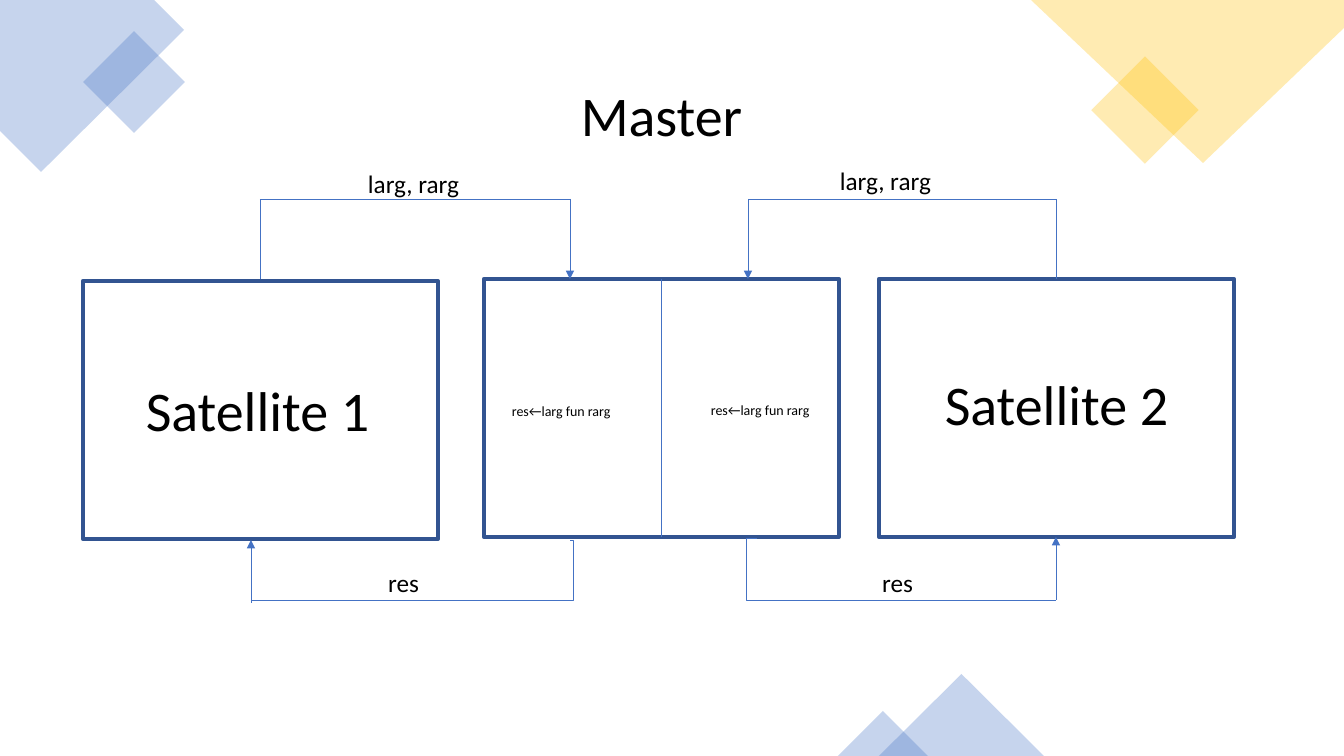
from lxml.etree import SubElement
from pptx import Presentation
from pptx.dml.color import RGBColor
from pptx.enum.shapes import MSO_CONNECTOR as LINK, MSO_SHAPE as SHAPE
from pptx.enum.text import MSO_ANCHOR, MSO_AUTO_SIZE, PP_ALIGN
from pptx.oxml.ns import qn
from pptx.util import Pt

PX = 914400 / 100.8
THEME = {
    "font": "Calibri",
    "blue": RGBColor(0x44, 0x72, 0xC4),
    "gold": RGBColor(0xFF, 0xC0, 0x00),
    "border": RGBColor(0x32, 0x54, 0x91),
    "text": RGBColor(0, 0, 0),
    "name": Pt(40),
    "label": Pt(18),
    "code": Pt(10),
    "box_line": Pt(3),
    "link_line": Pt(0.5),
    "alpha": 30000,
}


def emu(*lengths):
    return [round(length * PX) for length in lengths]


def write(holder, words, size, align):
    frame = holder.text_frame
    frame.text = words
    for key, value in {
        "word_wrap": True,
        "auto_size": MSO_AUTO_SIZE.SHAPE_TO_FIT_TEXT,
        "vertical_anchor": MSO_ANCHOR.TOP,
    }.items():
        setattr(frame, key, value)
    paragraph = frame.paragraphs[0]
    paragraph.alignment = align
    font = paragraph.runs[0].font
    font.name, font.size = THEME["font"], THEME[size]
    font.color.rgb = THEME["text"]


prs = Presentation()
prs.slide_width, prs.slide_height = emu(1344, 756)
slide = prs.slides.add_slide(prs.slide_layouts[5])
shapes = slide.shapes

# Corner decoration
decorations = []
for color, corners in [
    ("blue", [(0, 0), (154, 0), (184, 30), (41, 172), (0, 131)]),
    ("gold", [(1031, 0), (1344, 0), (1344, 28), (1203, 163)]),
]:
    outline = shapes.build_freeform(*corners[0], scale=PX)
    outline.add_line_segments(corners[1:], close=True)
    decorations.append((outline.convert_to_shape(), color))

for kind, color, place, turn in [
    (SHAPE.RECTANGLE, "blue", (98, 46, 72, 72), 315),
    (SHAPE.RECTANGLE, "gold", (1107, 72, 76, 76), 315),
    (SHAPE.ISOSCELES_TRIANGLE, "blue", (879, 674, 165, 82), 0),
    (SHAPE.ISOSCELES_TRIANGLE, "blue", (838, 711, 90, 45), 0),
]:
    corner = shapes.add_shape(kind, *emu(*place))
    corner.rotation = turn
    decorations.append((corner, color))

for decoration, color in decorations:
    decoration.shadow.inherit = False
    decoration.fill.solid()
    decoration.fill.fore_color.rgb = THEME[color]
    decoration.line.fill.background()
    tint = decoration.fill._xPr.find(qn("a:solidFill"))[0]
    SubElement(tint, qn("a:alpha"), val=str(THEME["alpha"]))

# Satellite 1, master, satellite 2
for left, top in [(83, 281), (484, 279), (879, 279)]:
    box = shapes.add_shape(SHAPE.RECTANGLE, *emu(left, top, 355, 258))
    box.shadow.inherit = False
    box.fill.background()
    box.line.color.rgb = THEME["border"]
    box.line.width = THEME["box_line"]

# Each link: start, end, arrowhead at the end, bend of an elbow
for start, end, arrow, bend in [
    ((661, 279), (661, 537), False, None),
    ((260, 279), (260, 199), False, None),
    ((260, 199), (570, 199), False, None),
    ((570, 199), (570, 279), True, None),
    ((1056, 279), (1056, 199), False, None),
    ((1056, 199), (748, 199), False, None),
    ((748, 199), (748, 279), True, None),
    ((251, 600), (570, 540), False, 101200),
    ((251, 603), (251, 540), True, None),
    ((757, 538), (1056, 600), False, -3700),
    ((1056, 600), (1056, 537), True, None),
]:
    kind = LINK.STRAIGHT if bend is None else LINK.ELBOW
    link = shapes.add_connector(kind, *emu(*start, *end))
    link.line.color.rgb = THEME["blue"]
    link.line.width = THEME["link_line"]
    properties = link._element.spPr
    SubElement(properties, qn("a:effectLst"))
    if arrow:
        SubElement(properties.find(qn("a:ln")), qn("a:tailEnd"), type="triangle")
    if bend is not None:
        guides = properties.find(qn("a:prstGeom")).get_or_add_avLst()
        SubElement(guides, qn("a:gd"), name="adj1", fmla=f"val {bend}")

title = shapes.title
title.left, title.top, title.width, title.height = emu(476, 75, 371, 78)
write(title, "Master", "name", PP_ALIGN.CENTER)

for words, size, align, (width, height), spots in [
    ("Satellite 1", "name", PP_ALIGN.CENTER, (371, 78), [(72, 371)]),
    ("Satellite 2", "name", PP_ALIGN.CENTER, (371, 78), [(871, 365)]),
    ("larg, rarg", "label", PP_ALIGN.CENTER, (295, 40), [(266, 163), (738, 160)]),
    ("res", "label", PP_ALIGN.CENTER, (273, 41), [(267, 562), (761, 562)]),
    ("res←larg fun rarg", "code", PP_ALIGN.LEFT, (127, 27), [(502, 398), (701, 397)]),
]:
    for left, top in spots:
        caption = shapes.add_textbox(*emu(left, top, width, height))
        write(caption, words, size, align)

prs.save("out.pptx")
